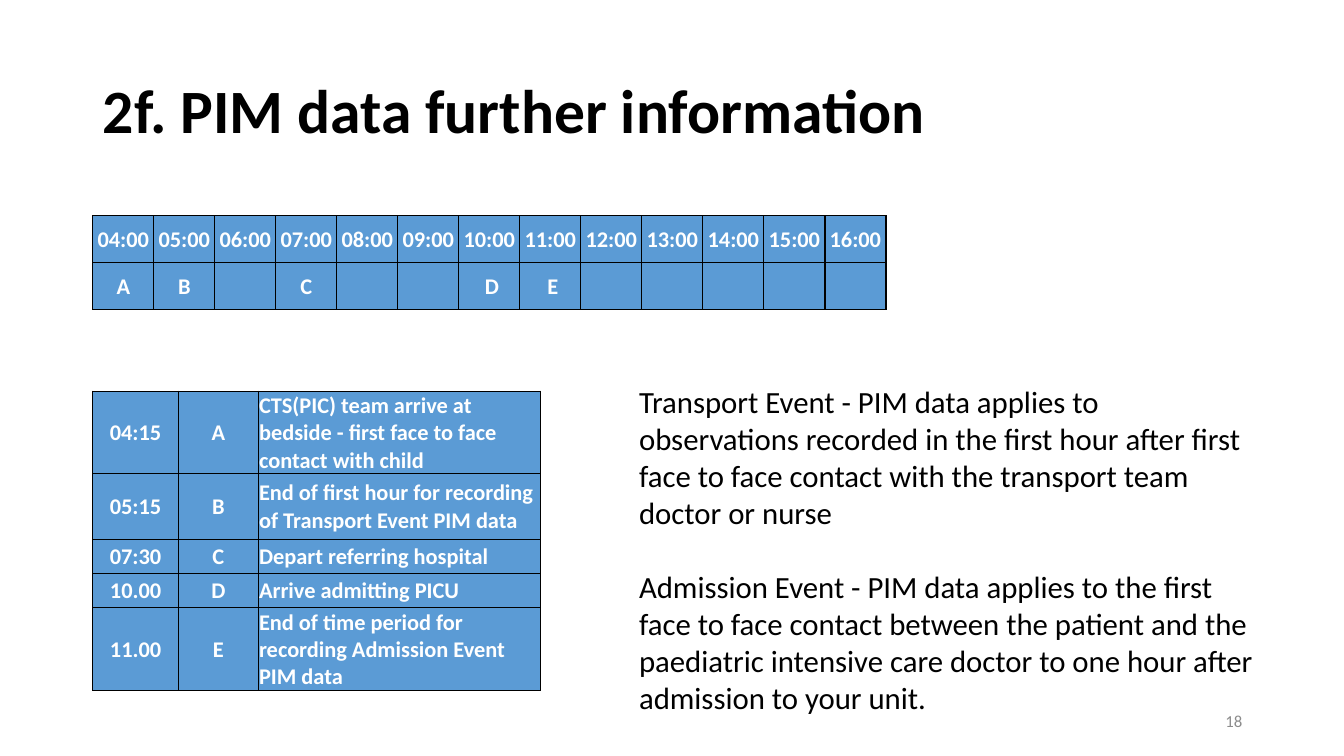
from lxml.etree import SubElement
from pptx import Presentation
from pptx.dml.color import RGBColor
from pptx.enum.text import MSO_ANCHOR, MSO_AUTO_SIZE, PP_ALIGN
from pptx.oxml import parse_xml
from pptx.oxml.ns import nsdecls, qn
from pptx.util import Inches, Pt

BLACK, WHITE, GREY, BLUE = "000000", "FFFFFF", "8C8C8C", "5B9BD5"


def colour(hex_text):
    return RGBColor.from_string(hex_text)


class SlideBuilder:
    font_name = "Calibri"

    def __init__(self, slide):
        self.slide = slide

    def add_span(self, para, text, size, hex_text, bold=False, align=PP_ALIGN.LEFT):
        para.alignment = align
        para.font.size = Pt(size)
        if not text:
            return
        span = para.add_run()
        span.text = text
        font = span.font
        font.name, font.size, font.bold = self.font_name, Pt(size), bold
        font.color.rgb = colour(hex_text)

    def title(self, text, left, top, width, height):
        box = self.slide.shapes.title
        box.left, box.top = Inches(left), Inches(top)
        box.width, box.height = Inches(width), Inches(height)
        frame = box.text_frame
        frame.auto_size = MSO_AUTO_SIZE.NONE
        frame.vertical_anchor = MSO_ANCHOR.MIDDLE
        para = frame.paragraphs[0]
        para.line_spacing = 0.9
        self.add_span(para, text, 44, BLACK, bold=True)

    def text(self, texts, left, top, width, height, size, hex_text,
             align=PP_ALIGN.LEFT, anchor=MSO_ANCHOR.TOP, gap=0):
        box = self.slide.shapes.add_textbox(
            Inches(left), Inches(top), Inches(width), Inches(height))
        frame = box.text_frame
        frame.word_wrap = True
        frame.vertical_anchor = anchor
        for index, text in enumerate(texts):
            para = frame.add_paragraph() if index else frame.paragraphs[0]
            if index:
                para.space_before = Pt(gap)
            self.add_span(para, text, size, hex_text, align=align)

    def border(self, cell):
        properties = cell._tc.get_or_add_tcPr()
        for index, side in enumerate(("lnL", "lnR", "lnT", "lnB")):
            line = parse_xml(f'<a:{side} {nsdecls("a")} w="{Pt(1)}"/>')
            fill = SubElement(line, qn("a:solidFill"))
            SubElement(fill, qn("a:srgbClr"), val=BLACK)
            properties.insert(index, line)

    def table(self, rows, left, top, widths, heights, left_columns=()):
        table = self.slide.shapes.add_table(
            len(rows), len(widths), Inches(left), Inches(top),
            Inches(sum(widths)), Inches(sum(heights))).table
        for column, width in zip(table.columns, widths):
            column.width = Inches(width)
        for row, height, texts in zip(table.rows, heights, rows):
            row.height = Inches(height)
            for index, (cell, text) in enumerate(zip(row.cells, texts)):
                cell.fill.solid()
                cell.fill.fore_color.rgb = colour(BLUE)
                cell.vertical_anchor = MSO_ANCHOR.MIDDLE
                cell.margin_left = cell.margin_right = cell.margin_top = Inches(0.01)
                cell.margin_bottom = 0
                self.border(cell)
                align = PP_ALIGN.LEFT if index in left_columns else PP_ALIGN.CENTER
                self.add_span(cell.text_frame.paragraphs[0], text, 16, WHITE, True, align)


def main():
    deck = Presentation()
    deck.slide_width, deck.slide_height = Inches(13.33), Inches(7.5)
    page = SlideBuilder(deck.slides.add_slide(deck.slide_layouts[5]))

    page.title("2f. PIM data further information", 0.92, 0.4, 11.5, 1.45)

    # Timeline of hours with the event letters below
    hours = range(4, 17)
    events = {4: "A", 5: "B", 7: "C", 10: " D", 11: " E"}
    timeline = [[f"{hour:02}:00" for hour in hours],
                [events.get(hour, "") for hour in hours]]
    page.table(timeline, 0.92, 2.14, [7.87 / len(hours)] * len(hours), [0.93 / 2] * 2)

    # Slide number
    page.text(["18"], 9.42, 6.95, 3, 0.4, 12, GREY,
              align=PP_ALIGN.RIGHT, anchor=MSO_ANCHOR.MIDDLE)

    # Key to the event letters
    key = [
        ("04:15", "A", "CTS(PIC) team arrive at bedside - first face to face contact with child"),
        ("05:15", "B", "End of first hour for recording of Transport Event PIM data"),
        ("07:30", "C", "Depart referring hospital"),
        ("10.00", "D", "Arrive admitting PICU"),
        ("11.00", "E", "End of time period for recording Admission Event PIM data"),
    ]
    page.table(key, 0.92, 3.88, [0.85, 0.79, 2.8],
               [0.82, 0.65, 0.34, 0.34, 0.82], left_columns=(2,))

    # Explanation of the two events
    page.text([
        "Transport Event - PIM data applies to observations recorded in the first hour "
        "after first face to face contact with the transport team doctor or nurse",
        "Admission Event - PIM data applies to the first face to face contact between "
        "the patient and the paediatric intensive care doctor to one hour after "
        "admission to your unit.",
    ], 6.24, 3.75, 6.33, 3.43, 22, BLACK, gap=26.5)

    deck.save("out.pptx")


if __name__ == "__main__":
    main()
